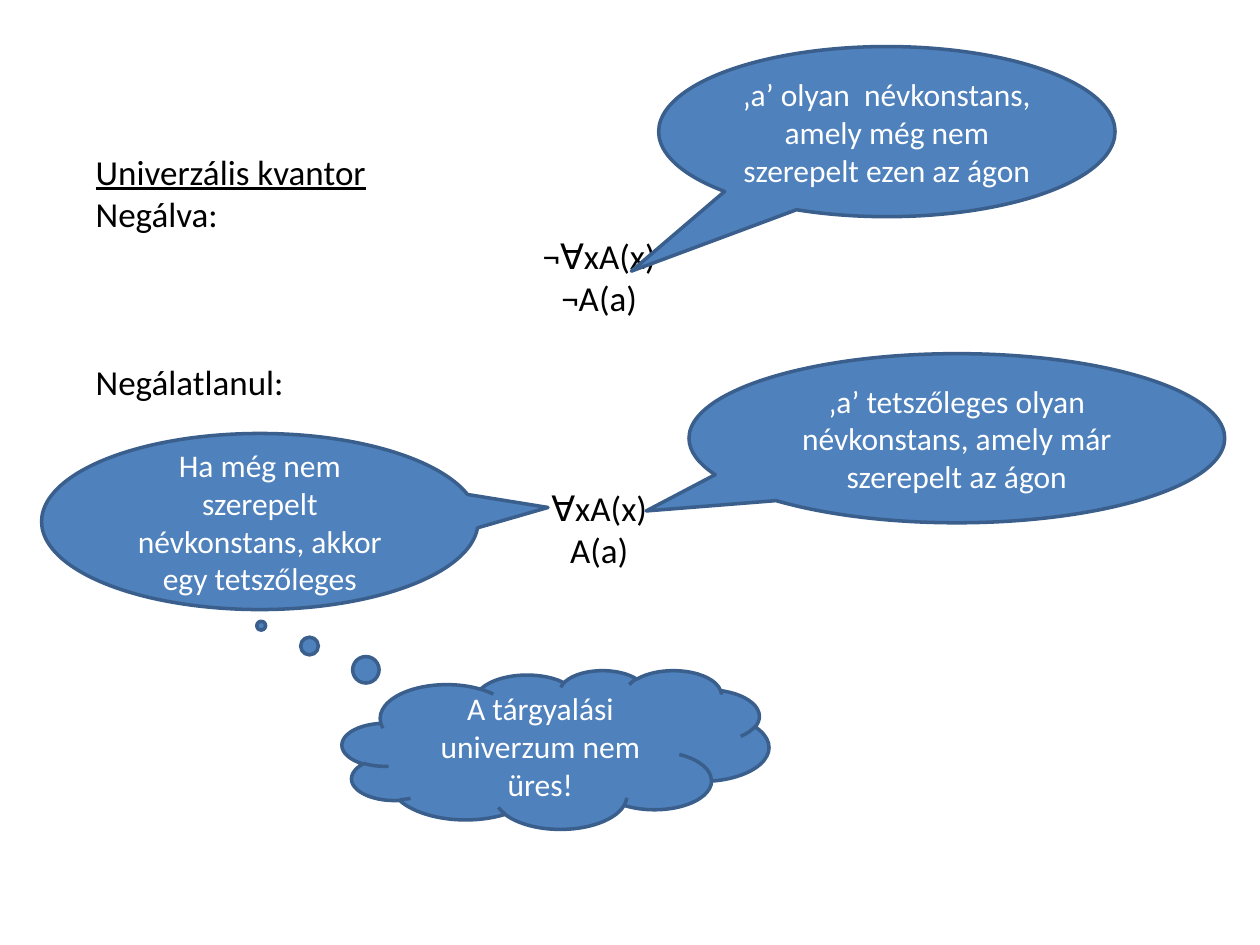
from dataclasses import dataclass

import pptx
import pptx.dml.color
import pptx.enum.shapes
import pptx.enum.text
import pptx.util
from pptx.util import Cm, Pt

SHAPE = pptx.enum.shapes.MSO_SHAPE
ALIGN = pptx.enum.text.PP_ALIGN
ANCHOR = pptx.enum.text.MSO_ANCHOR
FONT = "Calibri"


@dataclass
class Callout:
    """A bubble; sizes in cm, tip as a share of its size from its centre."""
    text: str
    left: float
    top: float
    width: float
    height: float
    tip: tuple[float, float]
    kind: SHAPE = SHAPE.OVAL_CALLOUT


@dataclass
class Line:
    text: str
    centred: bool = False
    underline: bool = False
    blank_lines_before: int = 0


CALLOUTS = [
    Callout("‚a’ tetszőleges olyan névkonstans, amely már szerepelt az ágon",
            13.89, 7.13, 10.8, 3.41, (-0.58, 0.43)),
    Callout("Ha még nem szerepelt névkonstans, akkor egy tetszőleges",
            0.84, 8.74, 8.8, 3.55, (0.66, -0.08)),
    Callout("A tárgyalási univerzum nem üres!",
            6.9, 13.51, 8.6, 3.2, (-0.69, -0.78), SHAPE.CLOUD_CALLOUT),
    Callout("‚a’ olyan  névkonstans, amely még nem szerepelt ezen az ágon",
            13.28, 0.94, 9.2, 3.43, (-0.56, 0.82)),
]

RULES = [
    Line("Univerzális kvantor", underline=True),
    Line("Negálva:"),
    Line("¬∀xA(x)", centred=True),
    Line("¬A(a)", centred=True),
    Line("Negálatlanul:", blank_lines_before=1),
    Line("∀xA(x)", centred=True, blank_lines_before=2),
    Line("A(a)", centred=True),
]


def rgb(code: str) -> pptx.dml.color.RGBColor:
    return pptx.dml.color.RGBColor.from_string(code)


def set_font(p, size: float, color: str) -> None:
    p.font.name = FONT
    p.font.size = Pt(size)
    p.font.color.rgb = rgb(color)


def add_rules(s, lines: list[Line]) -> None:
    tf = s.shapes.add_textbox(Cm(1.68), Cm(2.9), Cm(20.8), Cm(10.34)).text_frame
    tf.word_wrap = True
    for i, line in enumerate(lines):
        p = tf.add_paragraph() if i else tf.paragraphs[0]
        p.text = line.text
        p.alignment = ALIGN.CENTER if line.centred else ALIGN.LEFT
        p.space_before = Pt(24 * line.blank_lines_before)
        set_font(p, 20, "000000")
        p.font.underline = line.underline


def add_callout(s, c: Callout) -> None:
    sp = s.shapes.add_shape(c.kind, Cm(c.left), Cm(c.top), Cm(c.width), Cm(c.height))
    sp.adjustments[0], sp.adjustments[1] = c.tip
    sp.shadow.inherit = False
    sp.fill.solid()
    sp.fill.fore_color.rgb = rgb("4F81BD")
    sp.line.color.rgb = rgb("3A5F8C")
    sp.line.width = Pt(2)
    tf = sp.text_frame
    tf.word_wrap = True
    tf.vertical_anchor = ANCHOR.MIDDLE
    p = tf.paragraphs[0]
    p.text = c.text
    p.alignment = ALIGN.CENTER
    set_font(p, 18, "FFFFFF")


def main() -> None:
    prs = pptx.Presentation()
    prs.slide_width, prs.slide_height = Cm(25.4), Cm(19.05)
    s = prs.slides.add_slide(prs.slide_layouts[6])
    add_rules(s, RULES)
    for callout in CALLOUTS:
        add_callout(s, callout)
    prs.save("out.pptx")


if __name__ == "__main__":
    main()
